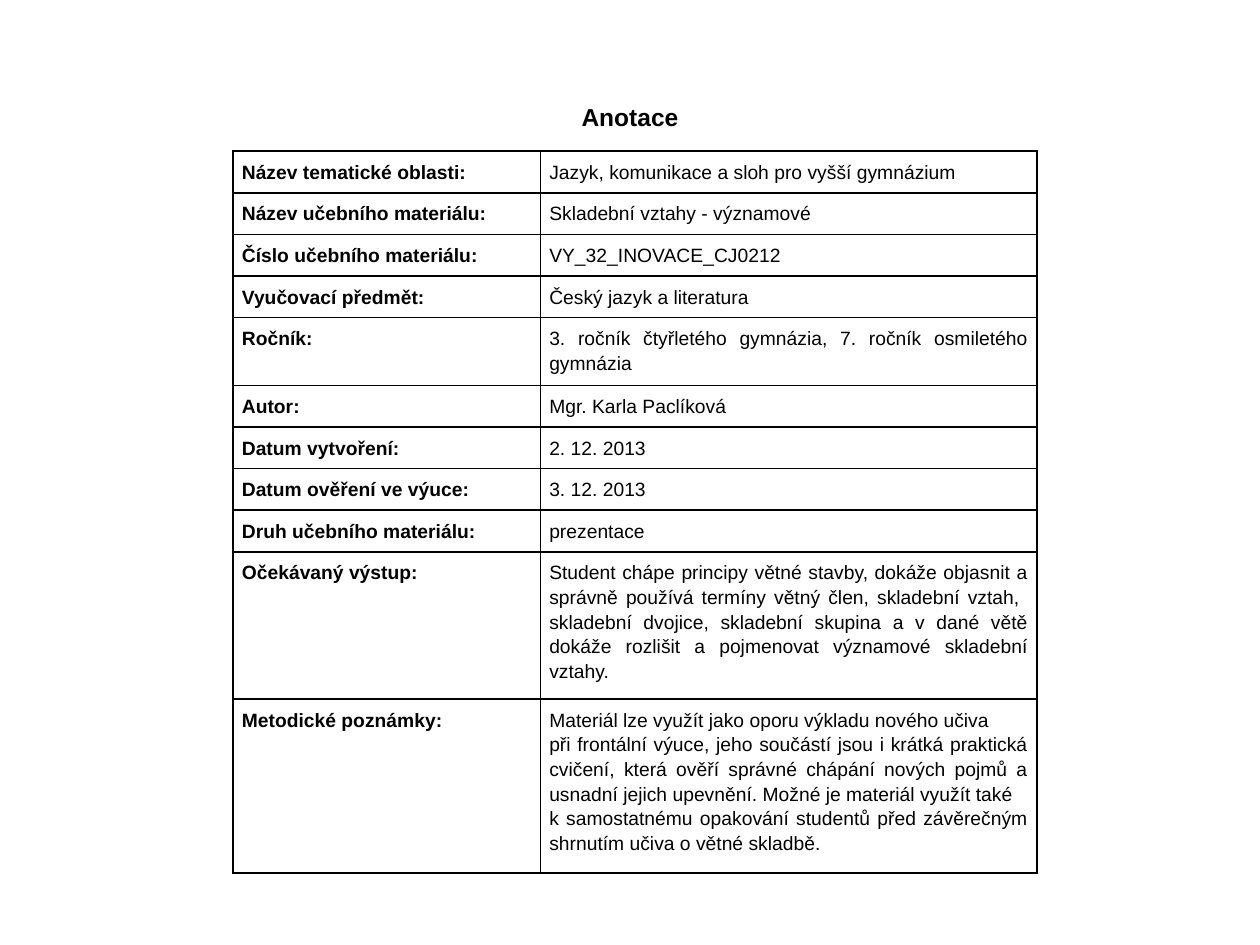
import pptx
import pptx.dml.color
import pptx.enum.text
import pptx.oxml
import pptx.oxml.ns
import pptx.util

Inches = pptx.util.Inches
ALIGN = pptx.enum.text.PP_ALIGN
ANCHOR = pptx.enum.text.MSO_ANCHOR
BLACK = pptx.dml.color.RGBColor(0x00, 0x00, 0x00)

# Content: label, paragraphs of the value, row height
TITLE = "Anotace"
ROWS = [
    ("Název tematické oblasti:", ["Jazyk, komunikace a sloh pro vyšší gymnázium"], 0.33),
    ("Název učebního materiálu:", ["Skladební vztahy - významové"], 0.33),
    ("Číslo učebního materiálu:", ["VY_32_INOVACE_CJ0212"], 0.33),
    ("Vyučovací předmět:", ["Český jazyk a literatura"], 0.33),
    ("Ročník:", ["3. ročník čtyřletého gymnázia, 7. ročník osmiletého gymnázia"], 0.54),
    ("Autor:", ["Mgr. Karla Paclíková"], 0.33),
    ("Datum vytvoření:", ["2. 12. 2013"], 0.33),
    ("Datum ověření ve výuce:", ["3. 12. 2013"], 0.33),
    ("Druh učebního materiálu:", ["prezentace"], 0.33),
    ("Očekávaný výstup:", [
        "Student chápe principy větné stavby, dokáže objasnit a správně používá "
        "termíny větný člen, skladební vztah,  skladební dvojice, skladební skupina "
        "a v dané větě dokáže rozlišit a pojmenovat významové skladební vztahy."], 1.17),
    ("Metodické poznámky:", [
        "Materiál lze využít jako oporu výkladu nového učiva ",
        "při frontální výuce, jeho součástí jsou i krátká praktická cvičení, která "
        "ověří správné chápání nových pojmů a usnadní jejich upevnění. Možné je "
        "materiál využít také ",
        "k samostatnému opakování studentů před závěrečným shrnutím učiva o větné "
        "skladbě."], 1.38),
]
COLUMNS = [2.44, 3.94]
TABLE_LEFT, TABLE_TOP = 1.85, 1.2
CELL_FORMAT = {
    "margin_left": Inches(0.07), "margin_right": Inches(0.07),
    "margin_top": Inches(0.06), "margin_bottom": Inches(0.06),
    "vertical_anchor": ANCHOR.TOP,
}


def apply(target, values):
    for name, value in values.items():
        setattr(target, name, value)


def write(frame, texts, size, bold, align, spacing):
    """Fill a text frame with one paragraph per text."""
    for index, text in enumerate(texts):
        para = frame.add_paragraph() if index else frame.paragraphs[0]
        apply(para, {"alignment": align, "line_spacing": spacing})
        span = para.add_run()
        span.text = text
        apply(span.font, {"name": "Arial", "size": pptx.util.Pt(size), "bold": bold})
        span.font.color.rgb = BLACK


def add_borders(cell):
    """Draw a 1 pt line on every side; lines come before the fill."""
    properties = cell._tc.get_or_add_tcPr()
    for index, side in enumerate(("lnL", "lnR", "lnT", "lnB")):
        line = pptx.oxml.parse_xml(
            f'<a:{side} {pptx.oxml.ns.nsdecls("a")} w="{pptx.util.Pt(1)}">'
            f'<a:solidFill><a:srgbClr val="{BLACK}"/></a:solidFill></a:{side}>')
        properties.insert(index, line)


deck = pptx.Presentation()
apply(deck, {"slide_width": Inches(10), "slide_height": Inches(7.5)})
page = deck.slides.add_slide(deck.slide_layouts[5])

# Title
title = page.shapes.title
apply(title, {"left": 0, "top": Inches(0.68), "width": Inches(10), "height": Inches(0.5)})
apply(title.text_frame, {"vertical_anchor": ANCHOR.MIDDLE, "word_wrap": True})
write(title.text_frame, [TITLE], 14, True, ALIGN.CENTER, 1.0)

# Annotation table
table = page.shapes.add_table(
    len(ROWS), len(COLUMNS), Inches(TABLE_LEFT), Inches(TABLE_TOP),
    Inches(sum(COLUMNS)), Inches(sum(row[2] for row in ROWS))).table
apply(table, {"first_row": False, "horz_banding": False})
for column, width in zip(table.columns, COLUMNS):
    column.width = Inches(width)
for row, (label, values, height) in zip(table.rows, ROWS):
    row.height = Inches(height)
    label_cell, value_cell = row.cells
    write(label_cell.text_frame, [label], 11, True, ALIGN.LEFT, 1.15)
    write(value_cell.text_frame, values, 11, False, ALIGN.JUSTIFY, 1.15)
    for cell in (label_cell, value_cell):
        apply(cell, CELL_FORMAT)
        cell.fill.background()
        add_borders(cell)

deck.save("out.pptx")
